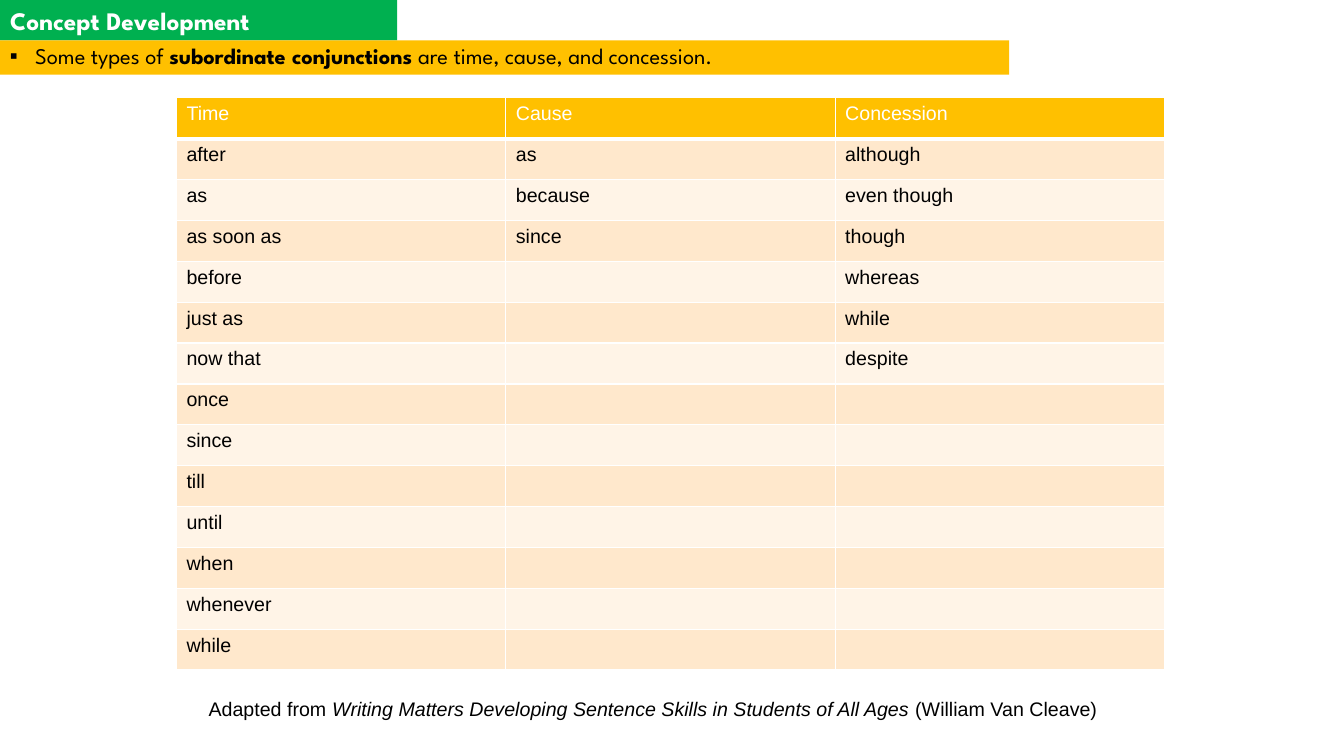
from itertools import zip_longest

from lxml import etree
from pptx import Presentation
from pptx.dml.color import RGBColor
from pptx.enum import shapes, text
from pptx.oxml import ns
from pptx.util import Inches, Pt

GREEN = RGBColor(0x00, 0xB0, 0x50)
GOLD = RGBColor(0xFF, 0xC0, 0x00)
PEACH = RGBColor(0xFF, 0xE8, 0xCC)
CREAM = RGBColor(0xFF, 0xF4, 0xE7)
WHITE = RGBColor(0xFF, 0xFF, 0xFF)
BLACK = RGBColor(0x00, 0x00, 0x00)

BODY = "Arial"
HEAD = "League Spartan"

WORDS = {
    "Time": ["after", "as", "as soon as", "before", "just as", "now that", "once",
             "since", "till", "until", "when", "whenever", "while"],
    "Cause": ["as", "because", "since"],
    "Concession": ["although", "even though", "though", "whereas", "while", "despite"],
}


def place(shape, left, top, width, height):
    shape.left, shape.top = Inches(left), Inches(top)
    shape.width, shape.height = Inches(width), Inches(height)


def add_run(para, words, font, size, color, bold=False, italic=False):
    run = para.add_run()
    run.text = words
    run.font.name = font
    run.font.size = Pt(size)
    run.font.color.rgb = color
    run.font.bold = bold
    run.font.italic = italic


def set_frame(shape, anchor):
    frame = shape.text_frame
    frame.word_wrap = True
    frame.auto_size = text.MSO_AUTO_SIZE.NONE
    frame.vertical_anchor = anchor
    frame.margin_left = frame.margin_right = Inches(0.1)
    frame.margin_top = frame.margin_bottom = Inches(0.05)
    para = frame.paragraphs[0]
    para.alignment = text.PP_ALIGN.LEFT
    return para


def fill_shape(shape, color):
    shape.fill.solid()
    shape.fill.fore_color.rgb = color
    shape.line.fill.background()


def add_title(slide):
    title = slide.shapes.title
    place(title, 0, 0, 3.94, 0.4)
    fill_shape(title, GREEN)
    para = set_frame(title, text.MSO_ANCHOR.MIDDLE)
    add_run(para, "Concept Development", HEAD, 18, WHITE, bold=True)


def add_bullet(para, mark):
    props = para._p.get_or_add_pPr()
    props.set("marL", str(Inches(0.25)))
    props.set("indent", str(-Inches(0.25)))
    color = etree.SubElement(props, ns.qn("a:buClr"))
    etree.SubElement(color, ns.qn("a:srgbClr"), val=str(BLACK))
    etree.SubElement(props, ns.qn("a:buFont"), typeface=BODY)
    etree.SubElement(props, ns.qn("a:buChar"), char=mark)


def add_bar(slide):
    bar = slide.shapes.add_shape(shapes.MSO_SHAPE.RECTANGLE, 0, Inches(0.4),
                                 Inches(10.01), Inches(0.34))
    bar.shadow.inherit = False
    fill_shape(bar, GOLD)
    para = set_frame(bar, text.MSO_ANCHOR.MIDDLE)
    add_bullet(para, "▪")
    para.line_spacing = 0.9
    add_run(para, "Some types of ", HEAD, 16, BLACK)
    add_run(para, "subordinate conjunctions ", HEAD, 16, BLACK, bold=True)
    add_run(para, "are time, cause, and concession.", HEAD, 16, BLACK)


def set_edges(cell, top, bottom):
    props = cell._tc.get_or_add_tcPr()
    widths = {"a:lnL": 1, "a:lnR": 1, "a:lnT": top, "a:lnB": bottom}
    for spot, (tag, width) in enumerate(widths.items()):
        line = etree.Element(ns.qn(tag), w=str(Pt(width)))
        fill = etree.SubElement(line, ns.qn("a:solidFill"))
        etree.SubElement(fill, ns.qn("a:srgbClr"), val=str(WHITE))
        props.insert(spot, line)


def add_grid(slide):
    rows = [tuple(WORDS), *zip_longest(*WORDS.values(), fillvalue="")]
    frame = slide.shapes.add_table(len(rows), len(WORDS), Inches(1.75), Inches(0.97),
                                   Inches(9.8), Inches(5.68))
    for y, row in enumerate(rows):
        if y == 0:
            fill, ink = GOLD, WHITE
        else:
            fill, ink = (PEACH if y % 2 else CREAM), BLACK
        for x, word in enumerate(row):
            cell = frame.table.cell(y, x)
            cell.fill.solid()
            cell.fill.fore_color.rgb = fill
            set_edges(cell, 3 if y == 1 else 1, 3 if y == 0 else 1)
            para = cell.text_frame.paragraphs[0]
            if word:
                add_run(para, word, BODY, 14, ink)
            else:
                para.font.size = Pt(14)


def add_credit(slide):
    box = slide.shapes.add_textbox(Inches(1.97), Inches(6.86), Inches(10.74), Inches(0.42))
    para = set_frame(box, text.MSO_ANCHOR.TOP)
    add_run(para, "Adapted from ", BODY, 14, BLACK)
    add_run(para, "Writing Matters Developing Sentence Skills in Students of All Ages ",
            BODY, 14, BLACK, italic=True)
    add_run(para, "(William Van Cleave)", BODY, 14, BLACK)


def main():
    deck = Presentation()
    deck.slide_width, deck.slide_height = Inches(13.33), Inches(7.5)
    slide = deck.slides.add_slide(deck.slide_layouts[5])

    # Heading and key point
    add_title(slide)
    add_bar(slide)

    # Conjunctions by type, with their source
    add_grid(slide)
    add_credit(slide)

    deck.save("out.pptx")


if __name__ == "__main__":
    main()
